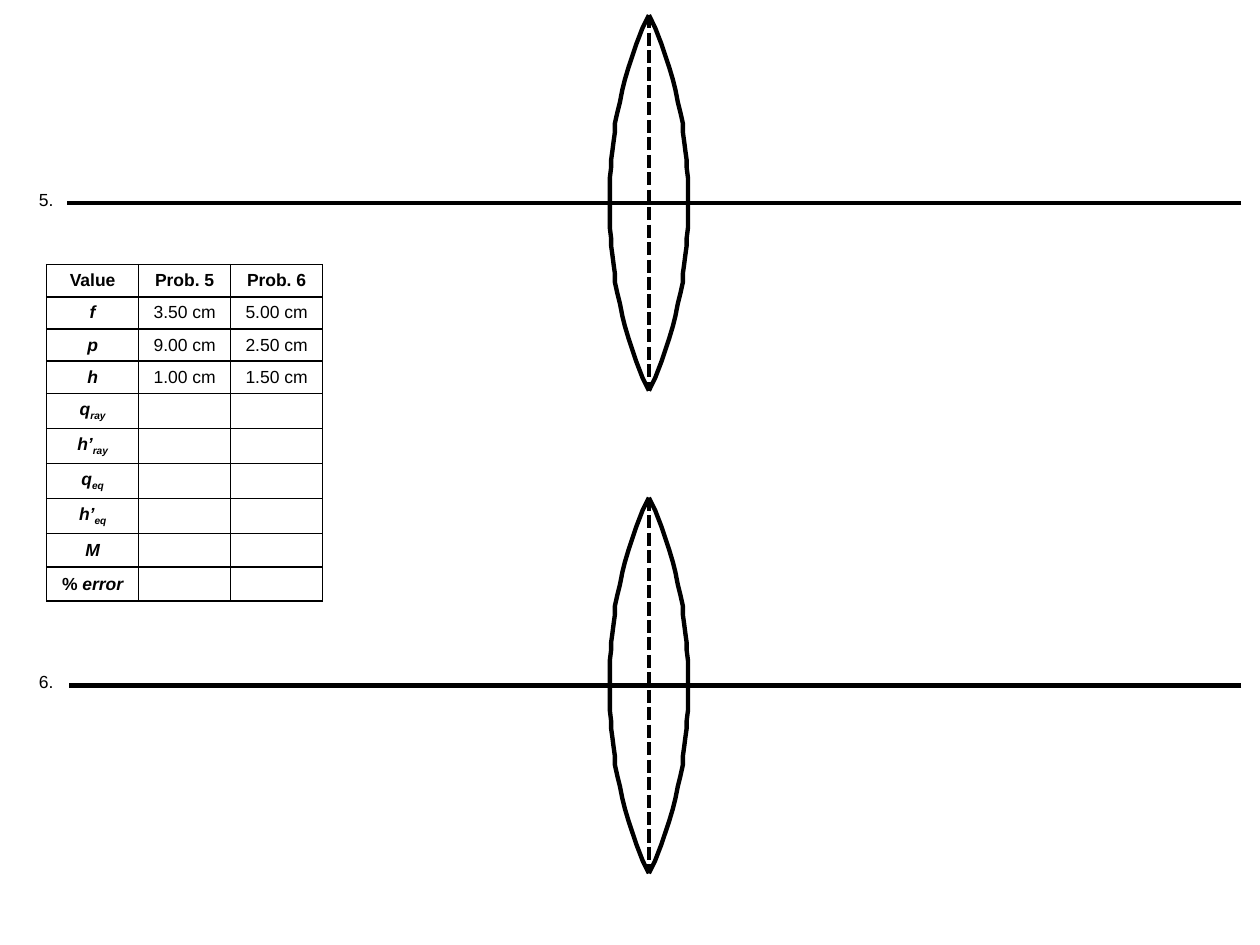
from lxml.etree import SubElement
from pptx import Presentation
from pptx.dml.color import RGBColor
from pptx.enum.dml import MSO_LINE_DASH_STYLE as DASH
from pptx.enum.shapes import MSO_CONNECTOR as CONN
from pptx.enum.text import MSO_ANCHOR, MSO_AUTO_SIZE, PP_ALIGN
from pptx.oxml.ns import qn
from pptx.util import Pt

PX = 9144  # EMU per px, 100 px to the inch
BLACK, WHITE = "000000", "FFFFFF"

# Content: number, axis height, axis start
PROBLEMS = [("5.", 161, 53), ("6.", 544, 55)]
AXIS_END = 985
LABEL_LEFT, LABEL_W, LABEL_H = 21, 32, 27

# Each cell is a list of (text, style); b bold, i italic, s subscript
TABLE = [
    [[("Value", "b")], [("Prob. 5", "b")], [("Prob. 6", "b")]],
    [[("f", "bi")], [("3.50 cm", "")], [("5.00 cm", "")]],
    [[("p", "bi")], [("9.00 cm", "")], [("2.50 cm", "")]],
    [[("h", "bi")], [("1.00 cm", "")], [("1.50 cm", "")]],
    [[("q", "bi"), ("ray", "bis")], [], []],
    [[("h’", "bi"), ("ray", "bis")], [], []],
    [[("q", "bi"), ("eq", "bis")], [], []],
    [[("h’", "bi"), ("eq", "bis")], [], []],
    [[("M", "bi")], [], []],
    [[("% ", "b"), ("error", "bi")], [], []],
]
TABLE_LEFT, TABLE_TOP, COL_W, ROW_H = 37, 210, 73, 25

# Lens outline from its tip to the axis: distance from centre line, from tip
LENS_X = 515
LENS_ARC = [(0, 0), (5, 10), (10, 23), (16, 41), (19, 51), (21, 59), (23, 69),
            (25, 77), (27, 86), (27, 93), (28, 100), (29, 108), (30, 115),
            (30, 121), (31, 129), (31, 135), (31, 142), (31, 149)]
LENS_HALF = LENS_ARC[-1][1]


def rgb(color):
    return RGBColor.from_string(color)


def px(*lengths):
    return [n * PX for n in lengths]


def set_line(s):
    s.line.color.rgb = rgb(BLACK)
    s.line.width = Pt(2.5)


def add_line(shapes, x1, y1, x2, y2):
    s = shapes.add_connector(CONN.STRAIGHT, *px(x1, y1, x2, y2))
    set_line(s)
    SubElement(s._element.spPr, qn("a:effectLst"))
    return s


def add_text(p, text, style=""):
    r = p.add_run()
    r.text = text
    look = {"name": "Arial", "size": Pt(10), "bold": "b" in style, "italic": "i" in style}
    for key, value in look.items():
        setattr(r.font, key, value)
    r.font.color.rgb = rgb(BLACK)
    if "s" in style:
        r._r.get_or_add_rPr().set("baseline", "-25000")


def add_label(shapes, text, axis_y):
    s = shapes.add_textbox(*px(LABEL_LEFT, axis_y - LABEL_H // 2 - 3, LABEL_W, LABEL_H))
    tf = s.text_frame
    tf.word_wrap = False
    tf.auto_size = MSO_AUTO_SIZE.SHAPE_TO_FIT_TEXT
    add_text(tf.paragraphs[0], text)


def set_borders(cell):
    tcPr = cell._tc.get_or_add_tcPr()
    for i, side in enumerate(("a:lnL", "a:lnR", "a:lnT", "a:lnB")):
        ln = SubElement(tcPr, qn(side), w=str(Pt(1)))
        fill = SubElement(ln, qn("a:solidFill"))
        SubElement(fill, qn("a:srgbClr"), val=BLACK)
        tcPr.remove(ln)
        tcPr.insert(i, ln)  # borders come before the fill


def add_table(shapes):
    rows, cols = len(TABLE), len(TABLE[0])
    table = shapes.add_table(
        rows, cols, *px(TABLE_LEFT, TABLE_TOP, COL_W * cols, ROW_H * rows)).table
    table.first_row = table.horz_banding = False
    for row, contents in zip(table.rows, TABLE):
        row.height = ROW_H * PX
        for cell, runs in zip(row.cells, contents):
            cell.fill.solid()
            cell.fill.fore_color.rgb = rgb(WHITE)
            cell.vertical_anchor = MSO_ANCHOR.MIDDLE
            set_borders(cell)
            p = cell.text_frame.paragraphs[0]
            p.alignment = PP_ALIGN.CENTER
            for text, style in runs:
                add_text(p, text, style)
            if not runs:  # keeps empty rows from growing
                SubElement(p._p, qn("a:endParaRPr"), sz="1000")


def add_lens(shapes, axis_y):
    lens = shapes.add_group_shape().shapes
    # Four arcs, mirrored about the centre line and the axis
    for side in (1, -1):
        for end in (-1, 1):
            tip_y = axis_y + end * LENS_HALF
            points = [(LENS_X + side * dx, tip_y - end * dy) for dx, dy in LENS_ARC]
            builder = lens.build_freeform(*points[0], scale=PX)
            builder.add_line_segments(points[1:], close=False)
            s = builder.convert_to_shape()
            s.shadow.inherit = False
            s.fill.background()
            set_line(s)
    centre = add_line(lens, LENS_X, axis_y - LENS_HALF, LENS_X, axis_y + LENS_HALF)
    centre.line.dash_style = DASH.SQUARE_DOT


def main():
    prs = Presentation()
    prs.slide_width, prs.slide_height = px(1000, 750)
    shapes = prs.slides.add_slide(prs.slide_layouts[6]).shapes

    add_table(shapes)
    for number, axis_y, axis_start in PROBLEMS:
        add_line(shapes, AXIS_END, axis_y, axis_start, axis_y)
        add_label(shapes, number, axis_y)
    for _, axis_y, _ in PROBLEMS:
        add_lens(shapes, axis_y)
    prs.save("out.pptx")


if __name__ == "__main__":
    main()
